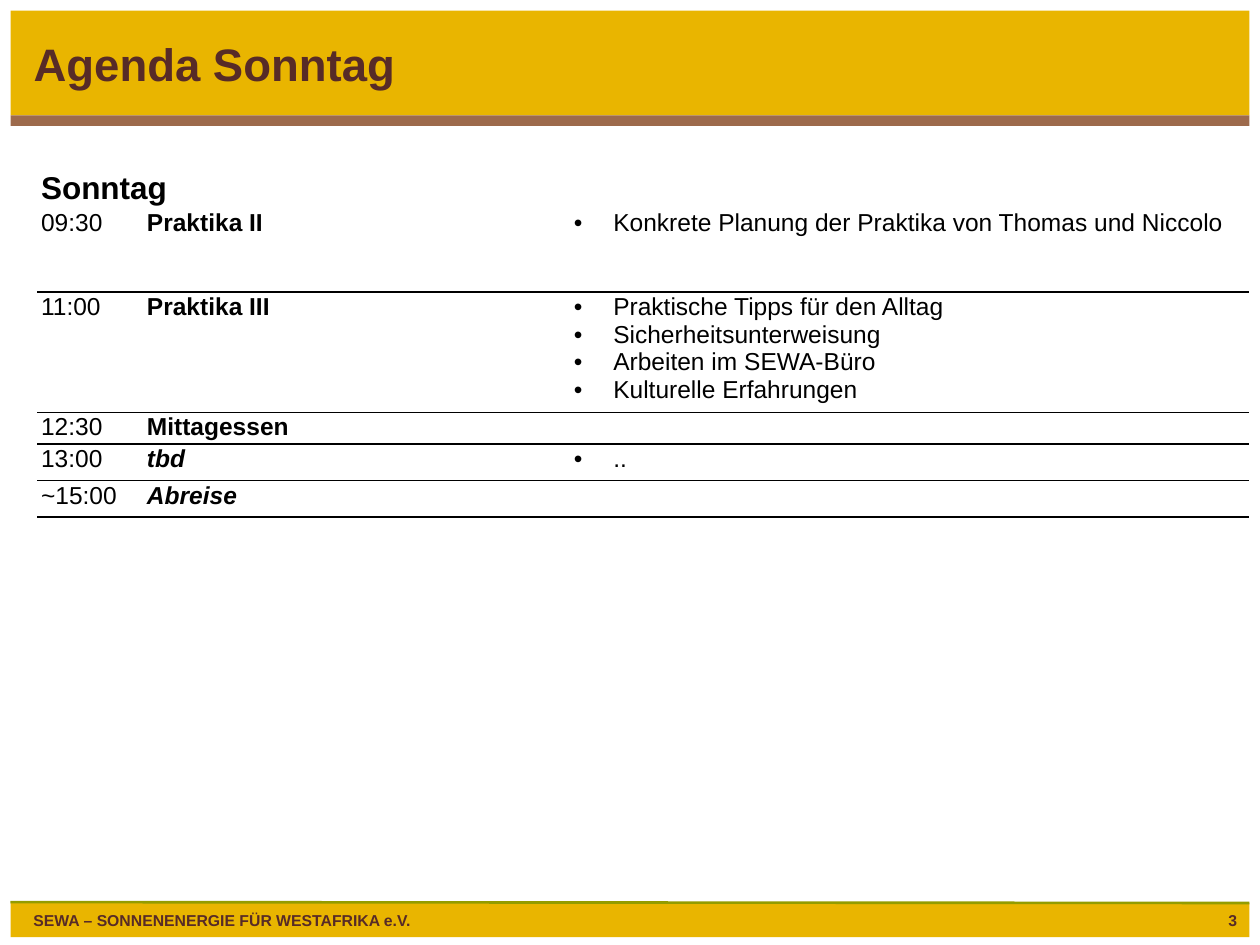
from dataclasses import dataclass

from lxml.etree import SubElement
from pptx import Presentation
from pptx.dml.color import RGBColor as RGB
from pptx.enum.shapes import MSO_CONNECTOR as CONN, MSO_SHAPE as SHAPE
from pptx.enum.text import MSO_ANCHOR as ANCHOR, PP_ALIGN as ALIGN
from pptx.oxml.ns import qn
from pptx.util import Pt


@dataclass(frozen=True)
class Theme:
    font: str = "Arial"
    gold: RGB = RGB(0xE9, 0xB5, 0x00)
    brown: RGB = RGB(0x9D, 0x6A, 0x4C)
    dark: RGB = RGB(0x57, 0x2B, 0x27)
    olive: RGB = RGB(0x93, 0x9C, 0x00)
    black: RGB = RGB(0, 0, 0)
    title: float = 26
    heading: float = 18
    body: float = 14
    small: float = 9


T = Theme()
NO_STYLE = "{2D5ABB26-0587-4C30-8999-92F81FD0307C}"
COL_WIDTHS = (60.5, 244, 388)
INDENT = 22.5
# Row height, time, topic, italic topic, details
AGENDA = (
    (48, "09:30", "Praktika II", False,
     ["Konkrete Planung der Praktika von Thomas und Niccolo"]),
    (65, "11:00", "Praktika III", False,
     ["Praktische Tipps für den Alltag", "Sicherheitsunterweisung",
      "Arbeiten im SEWA-Büro", "Kulturelle Erfahrungen"]),
    (17.8, "12:30", "Mittagessen", False, []),
    (20.8, "13:00", "tbd", True, [".."]),
    (20.8, "~15:00", "Abreise", True, []),
)


def set_attrs(obj, **values):
    for name, value in values.items():
        setattr(obj, name, value)


def write(p, text, size, color, bold=False, italic=False):
    r = p.add_run()
    r.text = text
    set_attrs(r.font, name=T.font, size=Pt(size), bold=bold, italic=italic)
    r.font.color.rgb = color


def add_band(s, x, y, w, h, color):
    sp = s.shapes.add_shape(SHAPE.RECTANGLE, Pt(x), Pt(y), Pt(w), Pt(h))
    sp.shadow.inherit = False
    sp.fill.solid()
    sp.fill.fore_color.rgb = color
    sp.line.fill.background()


def add_label(s, x, y, w, h, text, align):
    tf = s.shapes.add_textbox(Pt(x), Pt(y), Pt(w), Pt(h)).text_frame
    tf.word_wrap = True
    p = tf.paragraphs[0]
    p.alignment = align
    write(p, text, T.small, T.dark, bold=True)


def add_header(s, x, y, w, h, text):
    rule = 6
    add_band(s, x, y, w, h - rule, T.gold)
    add_band(s, x, y + h - rule, w, rule, T.brown)
    # Title placeholder, brought in front of the bands
    title = s.shapes.title
    s.shapes.element.append(title.element)
    set_attrs(title, left=Pt(x + 6), top=Pt(y + 6), width=Pt(552), height=Pt(54))
    tf = title.text_frame
    set_attrs(tf, vertical_anchor=ANCHOR.MIDDLE, word_wrap=True)
    p = tf.paragraphs[0]
    set_attrs(p, alignment=ALIGN.LEFT, line_spacing=Pt(T.title))
    write(p, text, T.title, T.dark, bold=True)


def add_footer(s, x, y, w, h, text, number):
    add_band(s, x, y, w, h, T.gold)
    line = s.shapes.add_connector(CONN.STRAIGHT, Pt(x), Pt(y - 0.5), Pt(x + w), Pt(y))
    line.line.color.rgb = T.olive
    line.line.width = Pt(1.5)
    SubElement(line.element.spPr, qn("a:effectLst"))
    add_label(s, x + 6, y + 1, w - 12, 18, text, ALIGN.LEFT)
    add_label(s, x + w - 42, y + 1, 42, 18, number, ALIGN.RIGHT)


def add_bullet(p):
    pPr = p._p.get_or_add_pPr()
    pPr.set("marL", str(Pt(INDENT)))
    pPr.set("indent", str(-Pt(INDENT)))
    SubElement(pPr, qn("a:buFont"), typeface=T.font)
    SubElement(pPr, qn("a:buChar"), char="•")


def format_cell(cell, edges):
    set_attrs(cell, margin_left=Pt(2.2), margin_right=Pt(2.2),
              margin_top=Pt(0.7), margin_bottom=Pt(0.7))
    tcPr = cell._tc.get_or_add_tcPr()
    for edge in edges:
        ln = SubElement(tcPr, qn(f"a:{edge}"), w=str(Pt(1)))
        fill = SubElement(ln, qn("a:solidFill"))
        SubElement(fill, qn("a:srgbClr"), val=str(T.black))
    cell.fill.background()
    if not cell.text:  # keeps empty cells from stretching their row
        SubElement(cell.text_frame.paragraphs[0]._p, qn("a:endParaRPr"),
                   sz=str(T.body * 100))


def add_agenda(s, x, y, w, heading):
    heights = [22.2] + [row[0] for row in AGENDA]
    table = s.shapes.add_table(len(heights), len(COL_WIDTHS), Pt(x), Pt(y),
                               Pt(w), Pt(sum(heights))).table
    set_attrs(table, first_row=False, horz_banding=False)
    table._tbl.tblPr.find(qn("a:tableStyleId")).text = NO_STYLE
    for col, width in zip(table.columns, COL_WIDTHS):
        col.width = Pt(width * w / sum(COL_WIDTHS))
    for row, height in zip(table.rows, heights):
        row.height = Pt(height)

    # Heading row
    head = table.cell(0, 0)
    head.merge(table.cell(0, 2))
    head.vertical_anchor = ANCHOR.MIDDLE
    write(head.text_frame.paragraphs[0], heading, T.heading, T.black, bold=True)

    # Agenda rows
    for i, (_, time, topic, italic, details) in enumerate(AGENDA, 1):
        write(table.cell(i, 0).text_frame.paragraphs[0], time, T.body, T.black)
        write(table.cell(i, 1).text_frame.paragraphs[0], topic, T.body, T.black,
              bold=True, italic=italic)
        tf = table.cell(i, 2).text_frame
        for j, detail in enumerate(details):
            p = tf.add_paragraph() if j else tf.paragraphs[0]
            add_bullet(p)
            write(p, detail, T.body, T.black)
        if topic == "Mittagessen":
            table.cell(i, 1).merge(table.cell(i, 2))

    # Horizontal rules below the first agenda row and around the others
    for i, row in enumerate(table.rows):
        edges = ((), ("lnB",))[i] if i < 2 else ("lnT", "lnB")
        for cell in row.cells:
            format_cell(cell, edges)


def main():
    prs = Presentation()
    set_attrs(prs, slide_width=Pt(720), slide_height=Pt(540))
    s = prs.slides.add_slide(prs.slide_layouts[5])
    add_header(s, 6, 6, 708, 66, "Agenda Sonntag")
    add_footer(s, 6, 516, 708, 19.5, "SEWA – SONNENENERGIE FÜR WESTAFRIKA e.V.", "3")
    add_agenda(s, 21.3, 96, 692.5, "Sonntag")
    prs.save("out.pptx")


if __name__ == "__main__":
    main()
